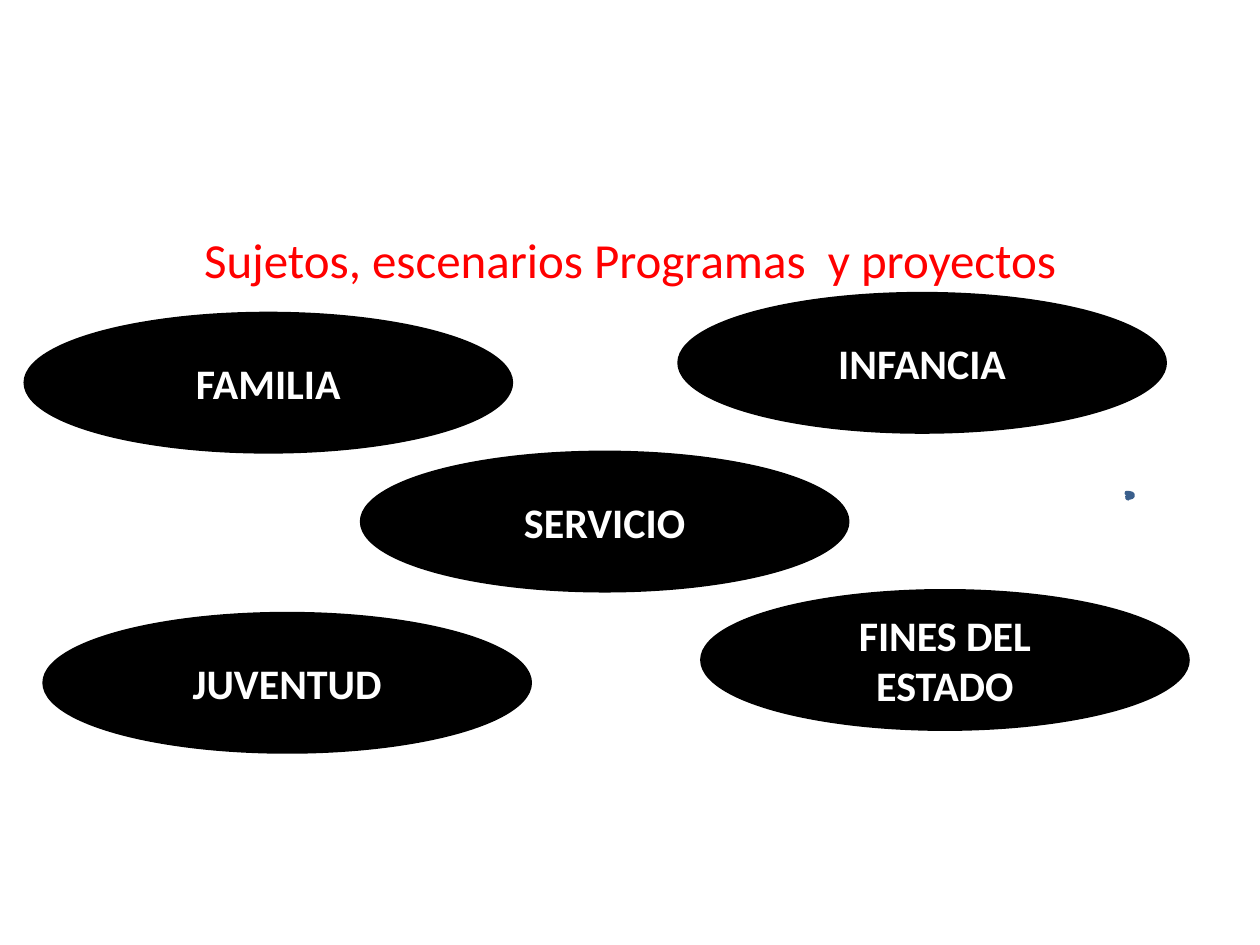
from pptx import Presentation
from pptx.dml.color import RGBColor
from pptx.enum.shapes import MSO_SHAPE
from pptx.enum.text import MSO_ANCHOR, PP_ALIGN
from pptx.util import Cm, Pt

ELLIPSE = MSO_SHAPE.OVAL
CURVED_ARROW = MSO_SHAPE.CURVED_LEFT_ARROW
MIDDLE = MSO_ANCHOR.MIDDLE
CENTER = PP_ALIGN.CENTER

FONT = "Calibri"
BLACK, WHITE, RED = "000000", "FFFFFF", "FF0000"
BLUE, DARK_BLUE = "4F81BD", "3A5F8C"

TOPIC_WIDTH, TOPIC_HEIGHT = 9.8, 2.79
# Topic, left and top in centimetres
TOPICS = [
    ("SERVICIO", 7.29, 9.12),
    ("FAMILIA", 0.51, 6.32),
    ("INFANCIA", 13.69, 5.92),
    ("JUVENTUD", 0.89, 12.37),
    ("FINES DEL ESTADO", 14.15, 11.91),
]


def color(hex_string):
    return RGBColor.from_string(hex_string)


def write_text(shape, text, size, text_color, bold=False):
    text_frame = shape.text_frame
    text_frame.word_wrap = True
    text_frame.vertical_anchor = MIDDLE
    text_frame.text = text
    paragraph = text_frame.paragraphs[0]
    paragraph.alignment = CENTER
    font = paragraph.runs[0].font
    font.name, font.size, font.bold = FONT, Pt(size), bold
    font.color.rgb = color(text_color)


def add_filled_shape(slide, kind, left, top, width, height, fill, line):
    shape = slide.shapes.add_shape(kind, Cm(left), Cm(top), Cm(width), Cm(height))
    shape.shadow.inherit = False
    shape.fill.solid()
    shape.fill.fore_color.rgb = color(fill)
    shape.line.color.rgb = color(line)
    shape.line.width = Pt(2)
    return shape


def add_title(slide, left, top, width, height):
    title = slide.shapes.add_textbox(Cm(left), Cm(top), Cm(width), Cm(height))
    write_text(title, "Sujetos, escenarios Programas  y proyectos", 28, RED)


def add_topic(slide, text, left, top, width, height):
    topic = add_filled_shape(slide, ELLIPSE, left, top, width, height, BLACK, BLACK)
    write_text(topic, text, 24, WHITE, bold=True)


def main():
    presentation = Presentation()
    presentation.slide_width = Cm(25.4)
    presentation.slide_height = Cm(19.05)
    slide = presentation.slides.add_slide(presentation.slide_layouts[6])

    # Title
    add_title(slide, 1.9, 4.11, 21.6, 2.21)

    # Topic ellipses
    for text, left, top in TOPICS:
        add_topic(slide, text, left, top, TOPIC_WIDTH, TOPIC_HEIGHT)

    # Tiny curved arrow at the right
    add_filled_shape(slide, CURVED_ARROW, 22.71, 9.93, 0.13, 0.13, BLUE, DARK_BLUE)

    presentation.save("out.pptx")


if __name__ == "__main__":
    main()
